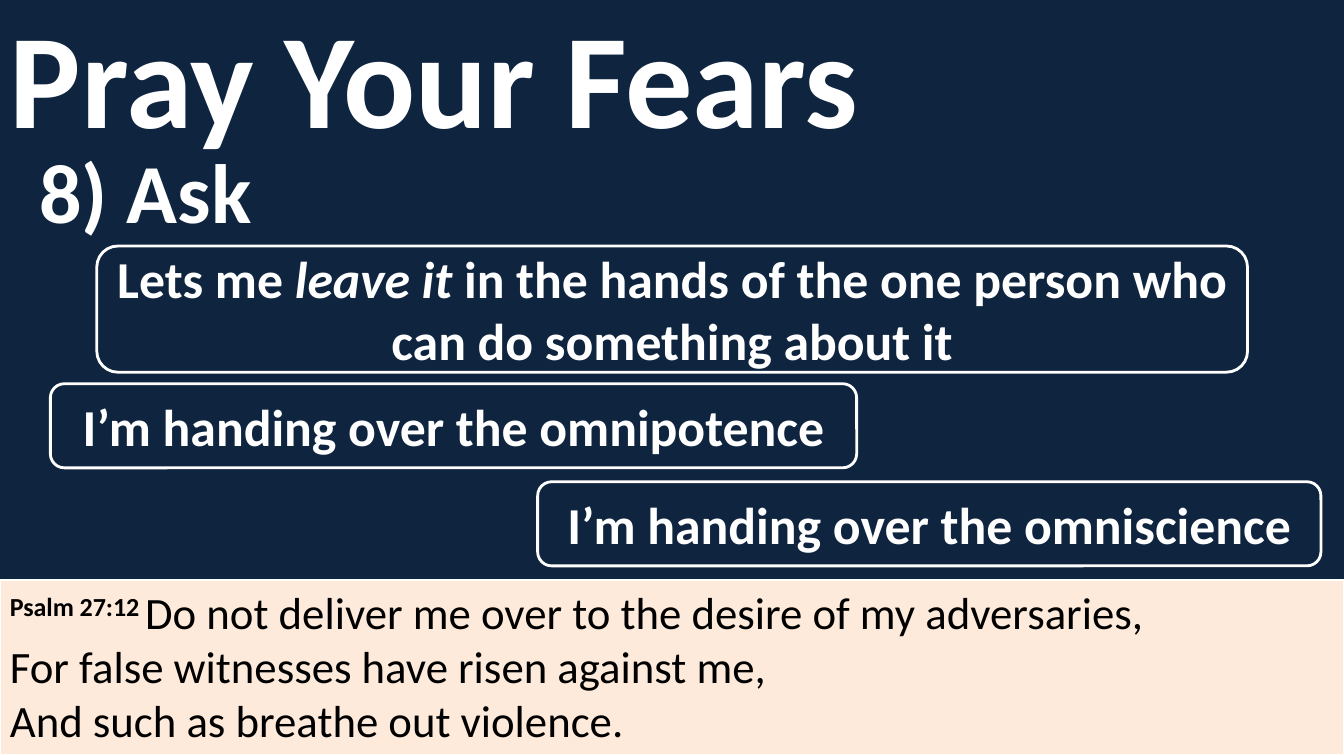
from pptx import Presentation
from pptx.dml.color import RGBColor
from pptx.enum.shapes import MSO_SHAPE
from pptx.enum.text import MSO_ANCHOR, MSO_AUTO_SIZE, PP_ALIGN
from pptx.util import Cm, Pt

RECTANGLE = MSO_SHAPE.RECTANGLE
ROUNDED = MSO_SHAPE.ROUNDED_RECTANGLE
TOP, MIDDLE = MSO_ANCHOR.TOP, MSO_ANCHOR.MIDDLE
LEFT, CENTER = PP_ALIGN.LEFT, PP_ALIGN.CENTER
FIT_SHAPE = MSO_AUTO_SIZE.SHAPE_TO_FIT_TEXT

FONT = "Calibri"
NAVY, PEACH, WHITE, BLACK = "0F243E", "FDEADA", "FFFFFF", "000000"
WIDTH, HEIGHT = 33.87, 19.05

VERSE_LINES = (
    "Do not deliver me over to the desire of my adversaries,",
    "For false witnesses have risen against me,",
    "And such as breathe out violence.",
)


def color(hex_string):
    """Turn a hex string into a colour."""
    return RGBColor.from_string(hex_string)


def add_span(para, text, size=37, ink=WHITE, bold=True, italic=False, raised=0):
    """Append formatted text to a paragraph."""
    span = para.add_run()
    span.text = text
    font = span.font
    font.name, font.size = FONT, Pt(size)
    font.bold, font.italic = bold, italic
    font.color.rgb = color(ink)
    if raised:
        font._element.set("baseline", str(raised * 1000))


def first_para(box, anchor=MIDDLE, align=LEFT):
    """Prepare the text frame of a box and return its paragraph."""
    frame = box.text_frame
    frame.word_wrap = True
    frame.vertical_anchor = anchor
    para = frame.paragraphs[0]
    para.alignment = align
    return para


def add_panel(page, kind, place, fill=None, line_width=0):
    """Add a shape with an optional fill and white outline."""
    panel = page.shapes.add_shape(kind, *map(Cm, place))
    panel.shadow.inherit = False
    if fill:
        panel.fill.solid()
        panel.fill.fore_color.rgb = color(fill)
    else:
        panel.fill.background()
    if line_width:
        panel.line.color.rgb = color(WHITE)
        panel.line.width = Pt(line_width)
    else:
        panel.line.fill.background()
    return panel


def add_verse(page):
    """Add the scripture band along the bottom."""
    band = add_panel(page, RECTANGLE, (0, 14.61, WIDTH, 4.42), PEACH, 1.5)
    para = first_para(band, TOP)
    add_span(para, "Psalm 27:12 ", size=32, ink=BLACK, raised=30)
    for number, line in enumerate(VERSE_LINES):
        if number:
            para.add_line_break()
        add_span(para, line, size=32, ink=BLACK, bold=False)


def add_title(page):
    """Add the large title."""
    title = add_panel(page, RECTANGLE, (0, -0.03, WIDTH, 3.84))
    add_span(first_para(title), "Pray Your Fears", size=96)


def add_heading(page):
    """Add the numbered heading."""
    heading = page.shapes.add_textbox(Cm(0.74), Cm(3.38), Cm(20.85), Cm(2.82))
    add_span(first_para(heading, TOP), "8) Ask", size=60)
    heading.text_frame.auto_size = FIT_SHAPE


def add_callout(page, place, *spans):
    """Add an outlined rounded box from (text, italic) spans."""
    callout = add_panel(page, ROUNDED, place, NAVY, 2)
    para = first_para(callout, align=CENTER)
    for text, italic in spans:
        add_span(para, text, italic=italic)


def main():
    """Build and save the slide."""
    deck = Presentation()
    deck.slide_width, deck.slide_height = Cm(WIDTH), Cm(HEIGHT)
    page = deck.slides.add_slide(deck.slide_layouts[6])
    page.background.fill.solid()
    page.background.fill.fore_color.rgb = color(NAVY)

    add_verse(page)
    add_title(page)
    add_heading(page)
    add_callout(
        page,
        (2.44, 6.2, 29, 3.18),
        ("Lets me ", False),
        ("leave it ", True),
        ("in the hands of the one person who can do something about it", False),
    )
    add_callout(page, (1.27, 9.67, 20.32, 2.12), ("I’m handing over the omnipotence", False))
    add_callout(page, (13.55, 12.14, 19.74, 2.12), ("I’m handing over the omniscience", False))
    deck.save("out.pptx")


if __name__ == "__main__":
    main()
